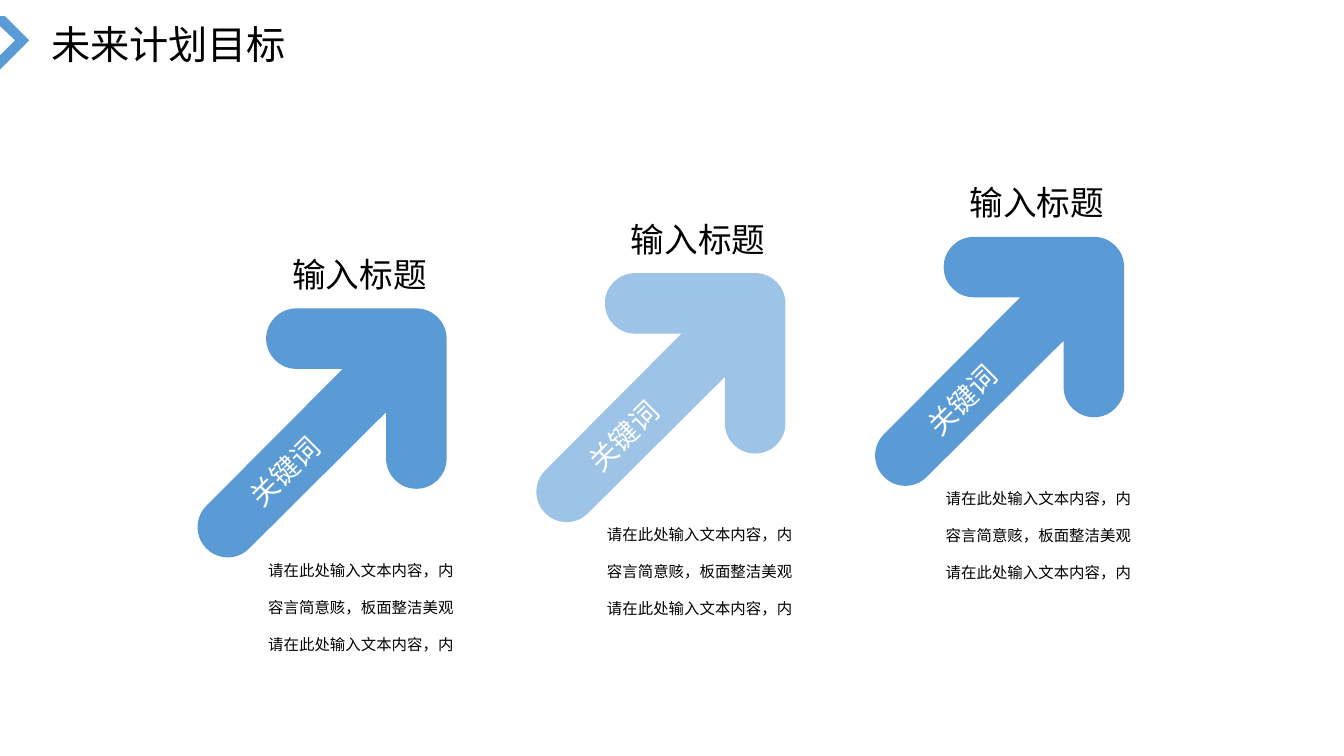
from itertools import pairwise
from math import cos, radians, sin, tan

from pptx import Presentation
from pptx.dml.color import RGBColor
from pptx.enum.text import MSO_AUTO_SIZE as AutoSize, PP_ALIGN as Align
from pptx.oxml.ns import qn
from pptx.util import Inches, Pt

BLUE = RGBColor(0x5B, 0x9B, 0xD5)
PALE_BLUE = RGBColor(0x9D, 0xC3, 0xE6)
BLACK = RGBColor(0, 0, 0)
WHITE = RGBColor(255, 255, 255)
FONT = "Calibri"

TITLE = "未来计划目标"
BODY = "请在此处输入文本内容，内容言简意赅，板面整洁美观请在此处输入文本内容，内"
STEPS = [
    ("输入标题", "关键词", BODY, BLUE),
    ("输入标题", "关键词", BODY, PALE_BLUE),
    ("输入标题", "关键词", BODY, BLUE),
]

SLIDE_WIDTH, SLIDE_HEIGHT = 13.33, 7.5
FIRST_LEFT = 1.96
STEP_RIGHT = 3.36
TOPS = [3.06, 2.71, 2.35]
ARROW_SIZE, CAP = 2.47, 0.3
FAR = ARROW_SIZE - CAP
HEAD = 1.79


def arc(x, y, *angles):
    curves = []
    for start, end in pairwise(map(radians, angles)):
        pull = 4 / 3 * tan((end - start) / 4)
        curves.append([
            (x + CAP * (cos(start) - pull * sin(start)), y + CAP * (sin(start) + pull * cos(start))),
            (x + CAP * (cos(end) + pull * sin(end)), y + CAP * (sin(end) - pull * cos(end))),
            (x + CAP * cos(end), y + CAP * sin(end)),
        ])
    return curves


CHEVRON = [[point] for point in [
    (0.05, 0.16), (0.29, 0.4), (-0.02, 0.71), (-0.02, 0.57),
    (0.15, 0.4), (-0.02, 0.24), (-0.02, 0.16)]]
ARROW = [
    [(HEAD - CAP / 2 - 0.66, 0)],
    [(FAR, 0)],
    *arc(FAR, CAP, -90, 0),
    [(ARROW_SIZE, HEAD - CAP)],
    *arc(FAR, HEAD - CAP, 0, 90, 180),
    [(FAR - CAP, 1.03)],
    [(CAP + CAP * cos(radians(45)), FAR + CAP * sin(radians(45)))],
    *arc(CAP, FAR, 45, 90, 180, 225),
    [(1.44, 2 * CAP)],
    [(ARROW_SIZE - HEAD + CAP, 2 * CAP)],
    *arc(ARROW_SIZE - HEAD + CAP, CAP, 90, 180, 270),
]


def add_outline(shapes, segments, color, left=0, top=0):
    corners = [(Inches(left + x), Inches(top + y)) for segment in segments for x, y in segment]
    builder = shapes.build_freeform(*corners[0])
    builder.add_line_segments(corners[1:], close=True)
    outline = builder.convert_to_shape()
    outline.shadow.inherit = False
    outline.fill.solid()
    outline.fill.fore_color.rgb = color
    outline.line.fill.background()
    lines = iter(list(outline.element.iter(qn("a:lnTo"))))
    for segment in segments[1:]:
        first, *others = [next(lines) for _ in segment]
        if others:
            first.tag = qn("a:cubicBezTo")
        for other in others:
            first.append(other[0])
            other.getparent().remove(other)


def add_text(shapes, text, box, size, color=BLACK, align=Align.LEFT, spacing=1.0, rotation=0):
    textbox = shapes.add_textbox(*map(Inches, box))
    textbox.rotation = rotation
    frame = textbox.text_frame
    frame.word_wrap = True
    frame.auto_size = AutoSize.SHAPE_TO_FIT_TEXT
    frame.text = text
    paragraph = frame.paragraphs[0]
    paragraph.alignment = align
    paragraph.line_spacing = spacing
    font = paragraph.runs[0].font
    font.name, font.size = FONT, Pt(size)
    font.color.rgb = color


def add_step(slide, left, top, heading, keyword, body, color):
    shapes = slide.shapes.add_group_shape().shapes
    add_outline(shapes, ARROW, color, left, top)
    add_text(shapes, keyword, (left + 0.33, top + 1.35, 1.16, 0.44), 20, WHITE,
             Align.JUSTIFY, rotation=315)
    add_text(shapes, heading, (left + 0.84, top - 0.59, 1.56, 0.5), 24)
    add_text(shapes, body, (left + 0.53, top + 2.27, 2.18, 1.21), 11,
             align=Align.CENTER, spacing=2.0)


def main():
    """Build the slide of future goals with three rising arrows."""
    deck = Presentation()
    deck.slide_width, deck.slide_height = Inches(SLIDE_WIDTH), Inches(SLIDE_HEIGHT)
    slide = deck.slides.add_slide(deck.slide_layouts[6])
    add_outline(slide.shapes, CHEVRON, BLUE)
    for index, (top, step) in enumerate(zip(TOPS, STEPS)):
        add_step(slide, FIRST_LEFT + index * STEP_RIGHT, top, *step)
    add_text(slide.shapes, TITLE, (0.41, 0.15, 2.87, 0.57), 28, align=Align.JUSTIFY)
    deck.save("out.pptx")


if __name__ == "__main__":
    main()
